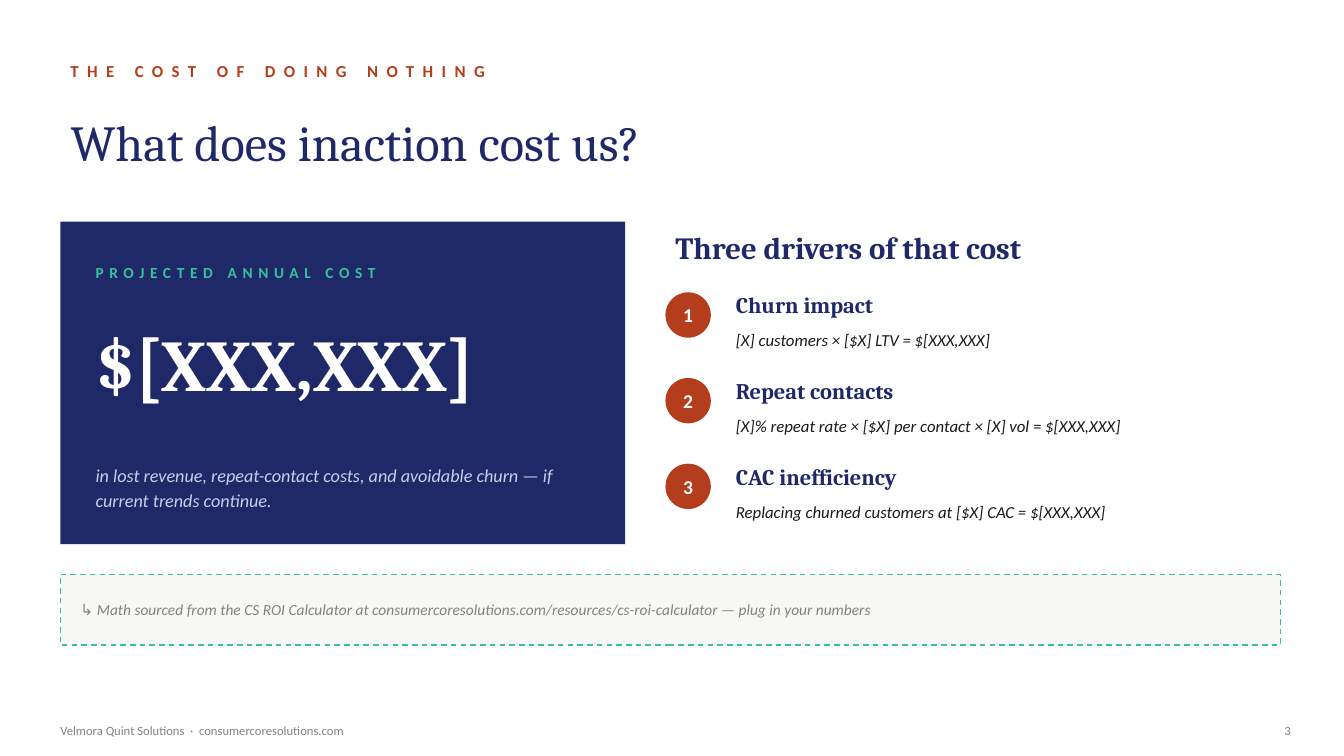
"""Build the slide on the cost of inaction and its three drivers."""
import pptx
import pptx.dml.color
import pptx.enum.dml
import pptx.enum.shapes
import pptx.enum.text
import pptx.util

PX = 9144
COLORS = {
    "navy": "1F2968",
    "rust": "B33D1D",
    "mint": "36C19F",
    "white": "FFFFFF",
    "lavender": "C8CFEA",
    "ink": "1A1A1A",
    "gray": "828282",
    "paper": "F7F8F6",
}
ALIGN = pptx.enum.text.PP_ALIGN
SHAPE = pptx.enum.shapes.MSO_SHAPE


def rgb(name):
    return pptx.dml.color.RGBColor.from_string(COLORS[name])


def write(text, *, at, size, color, font="Calibri", bold=False, italic=False,
          spacing=None, leading=None, align=ALIGN.LEFT, sp=None):
    left, top, width, height = (v * PX for v in at)
    if sp is None:
        sp = s.shapes.add_textbox(left, top, width, height)
    else:
        sp.left, sp.top, sp.width, sp.height = left, top, width, height
    tf = sp.text_frame
    tf.word_wrap = True
    tf.auto_size = pptx.enum.text.MSO_AUTO_SIZE.NONE
    tf.vertical_anchor = pptx.enum.text.MSO_ANCHOR.MIDDLE
    p = tf.paragraphs[0]
    p.alignment = align
    if leading:
        p.line_spacing = pptx.util.Pt(leading)
    r = p.add_run()
    r.text = text
    r.font.name = font
    r.font.size = pptx.util.Pt(size)
    r.font.bold = bold
    r.font.italic = italic
    r.font.color.rgb = rgb(color)
    if spacing:
        r._r.get_or_add_rPr().set("spc", str(spacing * 100))
    return sp


prs = pptx.Presentation()
prs.slide_width = 1333 * PX
prs.slide_height = 750 * PX
s = prs.slides.add_slide(prs.slide_layouts[5])

write("THE COST OF DOING NOTHING", at=(60, 50, 800, 40), size=12,
      color="rust", bold=True, spacing=6)
write("What does inaction cost us?", at=(60, 95, 1200, 90), size=36,
      color="navy", font="Cambria", sp=s.shapes.title)

panel = s.shapes.add_shape(SHAPE.RECTANGLE, 60 * PX, 220 * PX, 560 * PX, 320 * PX)
note = s.shapes.add_shape(SHAPE.RECTANGLE, 60 * PX, 570 * PX, 1210 * PX, 70 * PX)
for sp, fill in ((panel, "navy"), (note, "paper")):
    sp.shadow.inherit = False
    sp.fill.solid()
    sp.fill.fore_color.rgb = rgb(fill)
panel.line.fill.background()
note.line.color.rgb = rgb("mint")
note.line.width = pptx.util.Pt(1)
note.line.dash_style = pptx.enum.dml.MSO_LINE.DASH

write("PROJECTED ANNUAL COST", at=(85, 250, 510, 40), size=11,
      color="mint", bold=True, spacing=4)
write("$[XXX,XXX]", at=(85, 290, 510, 140), size=52,
      color="white", font="Cambria", bold=True)
write("in lost revenue, repeat-contact costs, and avoidable churn — if current trends continue.",
      at=(85, 440, 510, 85), size=13, color="lavender", italic=True, leading=18)

write("Three drivers of that cost", at=(660, 220, 620, 50), size=22,
      color="navy", font="Cambria", bold=True)
drivers = [
    ("Churn impact", "[X] customers × [$X] LTV = $[XXX,XXX]"),
    ("Repeat contacts", "[X]% repeat rate × [$X] per contact × [X] vol = $[XXX,XXX]"),
    ("CAC inefficiency", "Replacing churned customers at [$X] CAC = $[XXX,XXX]"),
]
for i, (driver, formula) in enumerate(drivers):
    top = 285 + 85 * i
    badge = s.shapes.add_shape(SHAPE.OVAL, 0, 0, PX, PX)
    badge.shadow.inherit = False
    badge.fill.solid()
    badge.fill.fore_color.rgb = rgb("rust")
    badge.line.fill.background()
    tf = badge.text_frame
    tf.margin_left = tf.margin_right = tf.margin_top = tf.margin_bottom = 0
    write(str(i + 1), at=(660, top + 5, 45, 45), size=14, color="white",
          bold=True, align=ALIGN.CENTER, sp=badge)
    write(driver, at=(720, top, 550, 35), size=16, color="navy",
          font="Cambria", bold=True)
    write(formula, at=(720, top + 35, 550, 35), size=12, color="ink", italic=True)

write("↳ Math sourced from the CS ROI Calculator at "
      "consumercoresolutions.com/resources/cs-roi-calculator — plug in your numbers",
      at=(70, 575, 1190, 60), size=11, color="gray", italic=True)
write("Velmora Quint Solutions  ·  consumercoresolutions.com",
      at=(50, 710, 800, 30), size=9, color="gray")
write("3", at=(1250, 710, 40, 30), size=9, color="gray", align=ALIGN.RIGHT)

prs.save("out.pptx")
